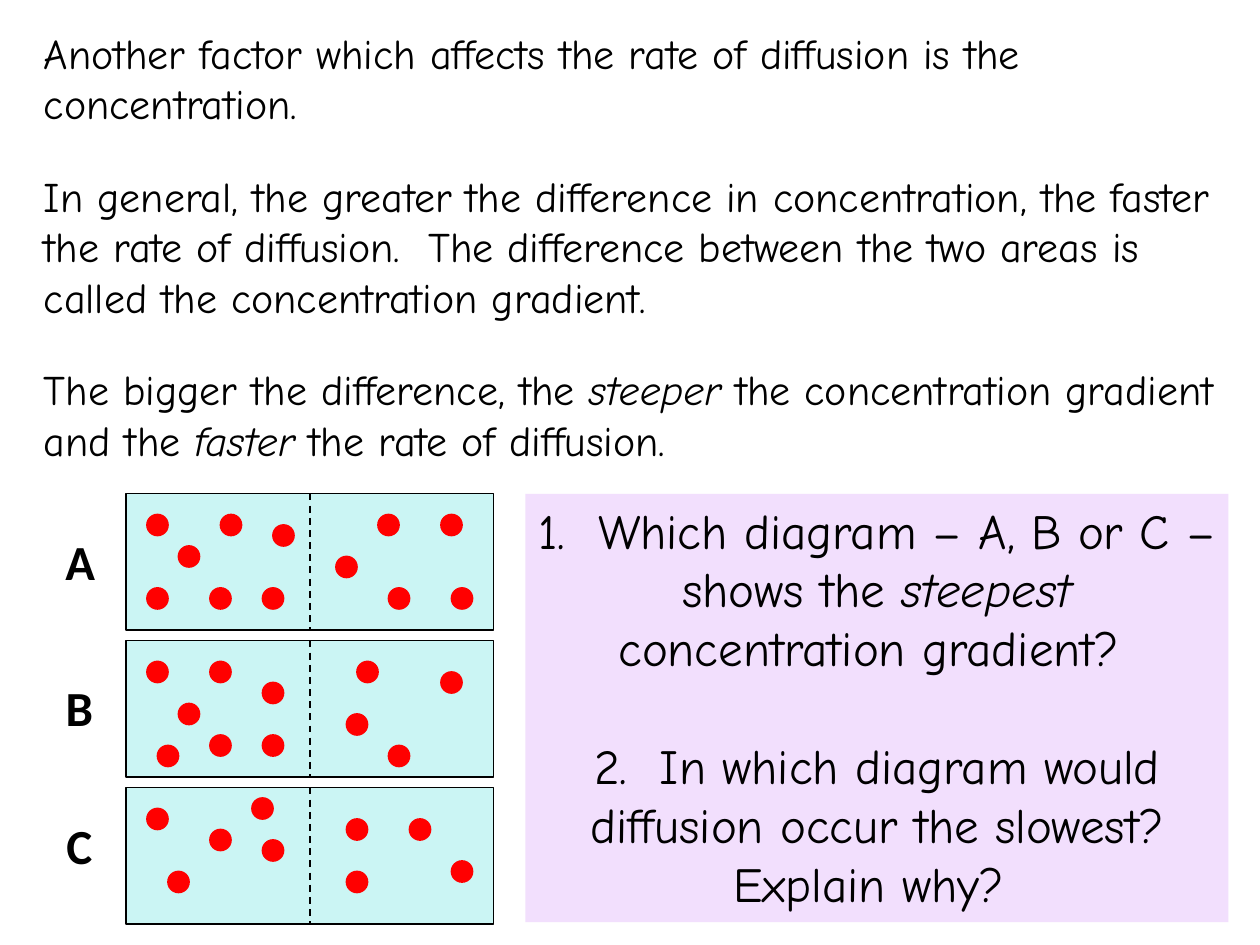
from pptx import Presentation
from pptx.dml.color import RGBColor
from pptx.enum.dml import MSO_LINE
from pptx.enum.shapes import MSO_CONNECTOR, MSO_SHAPE
from pptx.enum.text import MSO_ANCHOR, PP_ALIGN
from pptx.oxml.ns import qn
from pptx.util import Inches, Pt
from lxml import etree

RECTANGLE, OVAL = MSO_SHAPE.RECTANGLE, MSO_SHAPE.OVAL
STRAIGHT, DASH = MSO_CONNECTOR.STRAIGHT, MSO_LINE.DASH
LEFT, CENTER, TOP = PP_ALIGN.LEFT, PP_ALIGN.CENTER, MSO_ANCHOR.TOP
GRID = 1 / 12  # the diagrams sit on a grid of twelfths of an inch


def add_filled(kind, left, top, width, height, fill, line=None):
    shape = page.shapes.add_shape(kind, Inches(left), Inches(top), Inches(width), Inches(height))
    shape.shadow.inherit = False
    shape.fill.solid()
    shape.fill.fore_color.rgb = RGBColor.from_string(fill)
    if line:
        shape.line.color.rgb = RGBColor.from_string(line)
        shape.line.width = Pt(1)
    else:
        shape.line.fill.background()
    return shape


def write(box, paragraphs, font, size, align, gap=0, bold=False):
    """Each paragraph is a list of pieces; every second piece is italic."""
    frame = box.text_frame
    frame.word_wrap = True
    frame.vertical_anchor = TOP
    for number, pieces in enumerate(paragraphs):
        para = frame.add_paragraph() if number else frame.paragraphs[0]
        para.alignment = align
        para.space_before = Pt(gap if number else 0)
        for position, piece in enumerate(pieces):
            span = para.add_run()
            span.text = piece
            span.font.name = font
            span.font.size = Pt(size)
            span.font.bold = bold
            span.font.italic = position % 2 == 1
            span.font.color.rgb = RGBColor.from_string("000000")


deck = Presentation()
deck.slide_width, deck.slide_height = Inches(10), Inches(7.5)
page = deck.slides.add_slide(deck.slide_layouts[6])

# Explanation
explanation = page.shapes.add_textbox(Inches(0.25), Inches(0.17), Inches(9.5), Inches(3.74))
write(explanation, [
    ["Another factor which affects the rate of diffusion is the concentration."],
    ["In general, the greater the difference in concentration, the faster the rate of diffusion.  "
     "The difference between the two areas is called the concentration gradient."],
    ["The bigger the difference, the ", "steeper", " the concentration gradient and the ",
     "faster", " the rate of diffusion."],
], "Comic Neue", 24, LEFT, gap=24)

# Diagrams: label, label top, particles as (column, row) from the tank's corner
diagrams = [
    ("A", 4.17, [(2, 2), (9, 2), (14, 3), (5, 5), (2, 9), (8, 9), (13, 9),
                 (24, 2), (30, 2), (20, 6), (25, 9), (31, 9)]),
    ("B", 5.33, [(2, 2), (8, 2), (13, 4), (5, 6), (8, 9), (13, 9), (3, 10),
                 (22, 2), (30, 3), (21, 7), (25, 10)]),
    ("C", 6.42, [(2, 2), (12, 1), (8, 4), (13, 5), (4, 8),
                 (21, 3), (27, 3), (31, 7), (21, 8)]),
]
tank_left, tank_width, tank_height = 1, 35 * GRID, 13 * GRID
for index, (name, label_top, particles) in enumerate(diagrams):
    tank_top = (47 + 14 * index) * GRID
    add_filled(RECTANGLE, tank_left, tank_top, tank_width, tank_height, "CBF5F4", "000000")

    middle = Inches(tank_left + tank_width / 2)
    divider = page.shapes.add_connector(
        STRAIGHT, middle, Inches(tank_top), middle, Inches(tank_top + tank_height))
    divider.line.color.rgb = RGBColor.from_string("000000")
    divider.line.width = Pt(1)
    divider.line.dash_style = DASH
    etree.SubElement(divider._element.spPr, qn("a:effectLst"))

    for column, row in particles:
        add_filled(OVAL, tank_left + column * GRID, tank_top + row * GRID,
                   2 * GRID, 2 * GRID, "FF0000", "FF0000")

    label = page.shapes.add_textbox(Inches(0.42), Inches(label_top), Inches(0.42), Inches(0.57))
    write(label, [[name]], "Calibri", 28, CENTER, bold=True)

# Questions
questions = add_filled(RECTANGLE, 4.17, 3.92, 5.58, 3.4, "F2DFFD")
write(questions, [
    ["1.  Which diagram – A, B or C – shows the ", "steepest", " concentration gradient? "],
    ["2.  In which diagram would diffusion occur the slowest? Explain why? "],
], "Comic Neue", 28, CENTER, gap=33.6)

deck.save("out.pptx")
